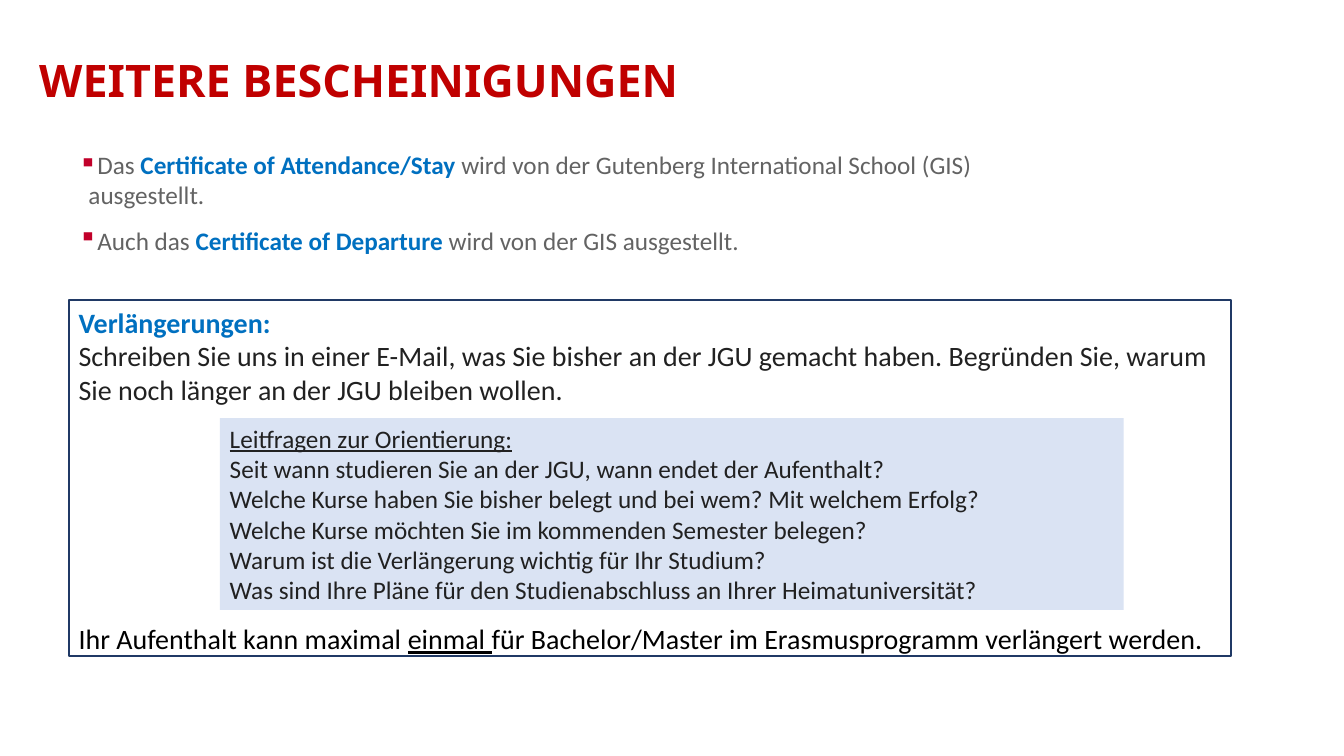
import pptx
import pptx.dml.color
import pptx.enum.shapes
import pptx.enum.text
import pptx.oxml
import pptx.util

Cm, Pt = pptx.util.Cm, pptx.util.Pt

HUES = {"red": "C00000", "mark": "C1002A", "grey": "636363", "blue": "0070C0",
        "dark": "212121", "black": "000000", "pale": "DAE3F3", "navy": "203965"}

# Run styles: size, font, hue, then font flags
STYLES = {
    "title": (32, "Noto Sans", "red", {"bold": True}),
    "plain": (18, "Calibri", "grey", {}),
    "key": (18, "Calibri", "blue", {"bold": True}),
    "head": (18, "Calibri", "dark", {"underline": True}),
    "ask": (18, "Calibri", "dark", {}),
    "lead": (20, "Calibri", "blue", {"bold": True}),
    "text": (20, "Calibri", "dark", {}),
    "note": (20, "Calibri", "black", {}),
    "once": (20, "Calibri", "black", {"underline": True}),
}

# Content: each line is a list of (text, style)
TITLE = [[("WEITERE BESCHEINIGUNGEN", "title")]]
POINTS = [
    [("Das ", "plain"), ("Certificate of Attendance/Stay ", "key"),
     ("wird von der Gutenberg International School (GIS) ausgestellt.", "plain")],
    [("Auch das ", "plain"), ("Certificate of Departure ", "key"),
     ("wird von der GIS ausgestellt.", "plain")],
]
GUIDE = [[("Leitfragen zur Orientierung:", "head")]] + [[(ask, "ask")] for ask in (
    "Seit wann studieren Sie an der JGU, wann endet der Aufenthalt?",
    "Welche Kurse haben Sie bisher belegt und bei wem? Mit welchem Erfolg?",
    "Welche Kurse möchten Sie im kommenden Semester belegen?",
    "Warum ist die Verlängerung wichtig für Ihr Studium?",
    "Was sind Ihre Pläne für den Studienabschluss an Ihrer Heimatuniversität?",
)]
EXTEND = [
    [("Verlängerungen:", "lead")],
    [("Schreiben Sie uns in einer E-Mail, was Sie bisher an der JGU gemacht haben. "
      "Begründen Sie, warum Sie noch länger an der JGU bleiben wollen.", "text")],
    [("Ihr Aufenthalt kann maximal ", "note"), ("einmal ", "once"),
     ("für Bachelor/Master im Erasmusprogramm verlängert werden.", "note")],
]

deck = pptx.Presentation()
deck.slide_width, deck.slide_height = Cm(33.87), Cm(19.05)
slide = deck.slides.add_slide(deck.slide_layouts[6])


def tint(hue):
    return pptx.dml.color.RGBColor.from_string(HUES[hue])


def put(obj, form):
    for name, value in form.items():
        setattr(obj, name, value)


def write(shape, lines, forms=None, **frame):
    """Fill a shape; forms maps a line number to its paragraph format."""
    body = shape.text_frame
    put(body, {"word_wrap": True,
               "vertical_anchor": pptx.enum.text.MSO_ANCHOR.TOP, **frame})
    for num, line in enumerate(lines):
        para = body.add_paragraph() if num else body.paragraphs[0]
        put(para, {"alignment": pptx.enum.text.PP_ALIGN.LEFT,
                   **(forms or {}).get(num, {})})
        for text, style in line:
            size, face, hue, flags = STYLES[style]
            run = para.add_run()
            run.text = text
            put(run.font, {"size": Pt(size), "name": face, **flags})
            run.font.color.rgb = tint(hue)


def text_box(*place):
    return slide.shapes.add_textbox(*map(Cm, place))


def panel(*place):
    shape = slide.shapes.add_shape(pptx.enum.shapes.MSO_SHAPE.RECTANGLE,
                                   *map(Cm, place))
    shape.shadow.inherit = False
    return shape


def bullet(para):
    props = para._p.get_or_add_pPr()
    put_in = {"marL": Cm(0.25), "indent": Cm(-0.64)}
    for name, value in put_in.items():
        props.set(name, str(int(value)))
    space = 'xmlns:a="http://schemas.openxmlformats.org/drawingml/2006/main"'
    for part in (f'<a:buClr {space}><a:srgbClr val="{HUES["mark"]}"/></a:buClr>',
                 f'<a:buChar {space} char="▪"/>'):
        props.append(pptx.oxml.parse_xml(part))


# Title
write(text_box(0.74, 1.4, 18.75, 1.37), TITLE, {0: {"line_spacing": 0.9}},
      vertical_anchor=pptx.enum.text.MSO_ANCHOR.MIDDLE,
      margin_top=0, margin_bottom=0)

# Certificates
points = text_box(1.73, 3.68, 23.37, 2.57)
write(points, POINTS, {0: {"line_spacing": 0.99}, 1: {"space_before": Pt(10)}})
for para in points.text_frame.paragraphs:
    bullet(para)

# Guiding questions
guide = panel(5.54, 10.54, 22.78, 4.83)
guide.fill.solid()
guide.fill.fore_color.rgb = tint("pale")
guide.line.fill.background()
write(guide, GUIDE)

# Extension frame, with room for the questions before its last line
frame = panel(1.73, 7.57, 29.29, 8.97)
frame.fill.background()
frame.line.color.rgb = tint("navy")
frame.line.width = Pt(1.5)
write(frame, EXTEND, {2: {"space_before": Pt(153.8)}})

deck.save("out.pptx")
